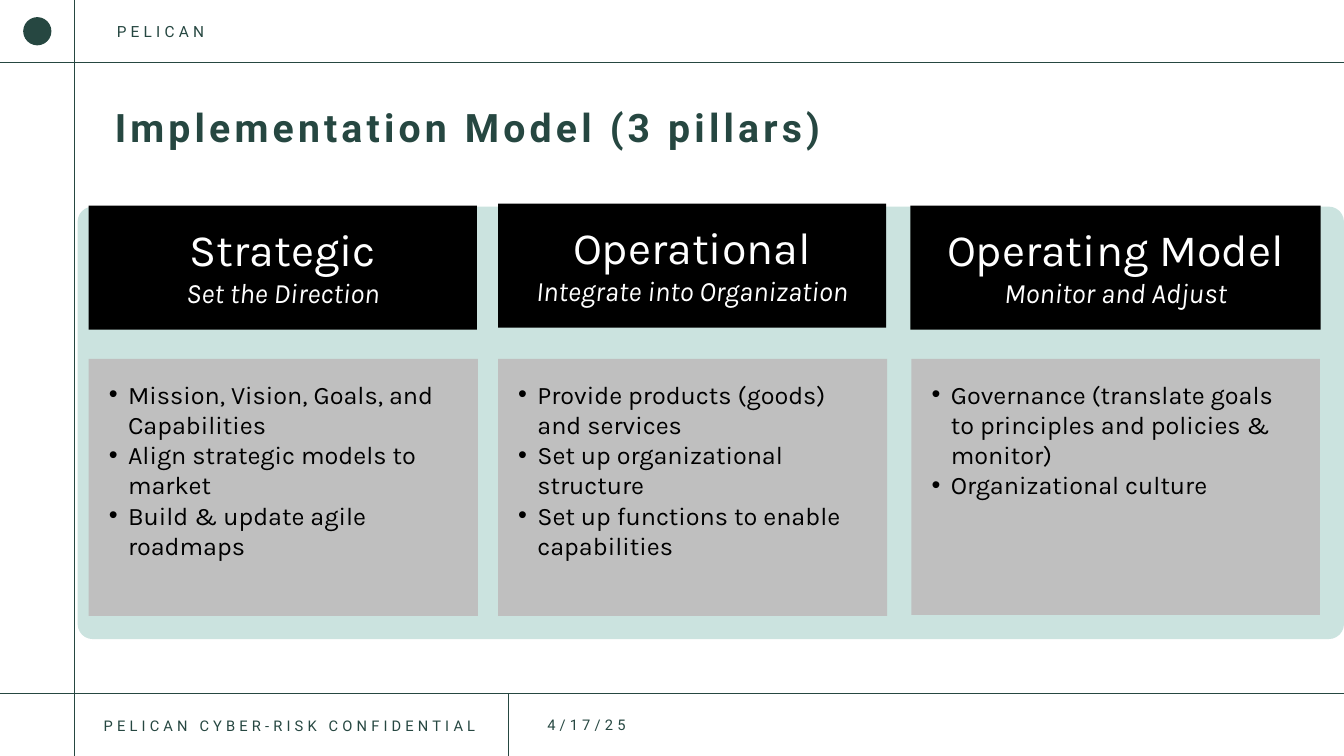
from dataclasses import dataclass

from lxml import etree
from pptx import Presentation
from pptx import util as u
from pptx.dml import color
from pptx.enum import shapes, text
from pptx.oxml import ns


@dataclass
class Theme:
    green: str = "264741"
    mint: str = "CBE3DF"
    black: str = "000000"
    white: str = "FFFFFF"
    grey: str = "BFBFBF"
    label_font: str = "Roboto"
    body_font: str = "Karla"
    footer_size: float = 10.5
    brand_size: float = 11
    title_size: float = 28
    header_size: float = 32
    subtitle_size: float = 20
    bullet_size: float = 18


theme = Theme()
presentation = Presentation()
presentation.slide_width = u.Inches(13.33)
presentation.slide_height = u.Inches(7.5)
slide = presentation.slides.add_slide(presentation.slide_layouts[6])


def add_block(kind, left, top, width, height, fill):
    shape = slide.shapes.add_shape(kind, *map(u.Inches, (left, top, width, height)))
    shape.shadow.inherit = False
    shape.fill.solid()
    shape.fill.fore_color.rgb = color.RGBColor.from_string(fill)
    shape.line.fill.background()
    return shape


def write(shape, content, size, ink, font=theme.label_font, bold=False, italic=False,
          align=text.PP_ALIGN.LEFT, anchor=text.MSO_ANCHOR.TOP,
          insets=(0.1, 0.05, 0.1, 0.05), tracking=0, bullet=False, append=False):
    frame = shape.text_frame
    frame.word_wrap = True
    frame.vertical_anchor = anchor
    frame.margin_left, frame.margin_top, frame.margin_right, frame.margin_bottom = map(u.Inches, insets)
    paragraph = frame.add_paragraph() if append else frame.paragraphs[0]
    paragraph.alignment = align
    run = paragraph.add_run()
    run.text = content
    run.font.name = font
    run.font.size = u.Pt(size)
    run.font.bold = bold
    run.font.italic = italic
    run.font.color.rgb = color.RGBColor.from_string(ink)
    if tracking:
        run.font._element.set("spc", str(tracking * 100))
    if bullet:
        properties = paragraph._p.get_or_add_pPr()
        properties.set("marL", str(u.Inches(0.19)))
        properties.set("indent", str(-u.Inches(0.19)))
        etree.SubElement(properties, ns.qn("a:buFont")).set("typeface", "Arial")
        etree.SubElement(properties, ns.qn("a:buChar")).set("char", "•")
    return paragraph


for x1, y1, x2, y2 in [
    (0, 6.88, 13.33, 6.88),
    (0, 0.62, 13.33, 0.62),
    (0.74, 0, 0.74, 7.5),
    (5.04, 6.88, 5.04, 7.5),
]:
    rule = slide.shapes.add_connector(shapes.MSO_CONNECTOR.STRAIGHT, *map(u.Inches, (x1, y1, x2, y2)))
    rule.line.color.rgb = color.RGBColor.from_string(theme.green)
    rule.line.width = u.Pt(0.5)
    etree.SubElement(rule._element.spPr, ns.qn("a:effectLst"))

add_block(shapes.MSO_SHAPE.OVAL, 0.23, 0.17, 0.28, 0.28, theme.green)

for content, size, left, top, width, height in [
    ("PELICAN CYBER-RISK CONFIDENTIAL", theme.footer_size, 0.93, 7.05, 4.11, 0.29),
    ("PELICAN", theme.brand_size, 1.06, 0.16, 1.22, 0.3),
    ("4/17/25", theme.footer_size, 5.33, 6.99, 1.63, 0.4),
]:
    label = slide.shapes.add_textbox(*map(u.Inches, (left, top, width, height)))
    write(label, content, size, theme.green, tracking=3, anchor=text.MSO_ANCHOR.MIDDLE)

title = slide.shapes.add_textbox(*map(u.Inches, (1.04, 0.86, 11.88, 0.64)))
heading = write(title, "Implementation Model (3 pillars)", theme.title_size, theme.green,
                bold=True, tracking=3)
heading.line_spacing = 1.25
heading.space_before = u.Pt(10)

panel = add_block(shapes.MSO_SHAPE.ROUNDED_RECTANGLE, 0.77, 2.05, 12.56, 4.29, theme.mint)
panel.adjustments[0] = 0.035

pillars = [
    ("Strategic", "Set the Direction", (0.88, 2.04, 3.85, 1.23), (0.88, 3.56, 3.86, 2.55), [
        "Mission, Vision, Goals, and Capabilities",
        "Align strategic models to market",
        "Build & update agile roadmaps",
    ]),
    ("Operational", "Integrate into Organization", (4.94, 2.02, 3.85, 1.23), (4.94, 3.56, 3.86, 2.55), [
        "Provide products (goods) and services",
        "Set up organizational structure",
        "Set up functions to enable capabilities",
    ]),
    ("Operating Model", "Monitor and Adjust", (9.03, 2.04, 4.07, 1.23), (9.04, 3.56, 4.05, 2.54), [
        "Governance (translate goals to principles and policies & monitor)",
        "Organizational culture",
    ]),
]
header_format = dict(ink=theme.white, font=theme.body_font, align=text.PP_ALIGN.CENTER,
                     insets=(0.1, 0.16, 0.1, 0.16))

for name, subtitle, header_box, card_box, points in pillars:
    header = add_block(shapes.MSO_SHAPE.RECTANGLE, *header_box, theme.black)
    write(header, name, theme.header_size, **header_format)
    write(header, subtitle, theme.subtitle_size, italic=True, append=True, **header_format)
    card = add_block(shapes.MSO_SHAPE.RECTANGLE, *card_box, theme.grey)
    for index, point in enumerate(points):
        write(card, point, theme.bullet_size, theme.black, font=theme.body_font,
              insets=(0.2, 0.2, 0.2, 0.16), bullet=True, append=index > 0)

presentation.save("out.pptx")
